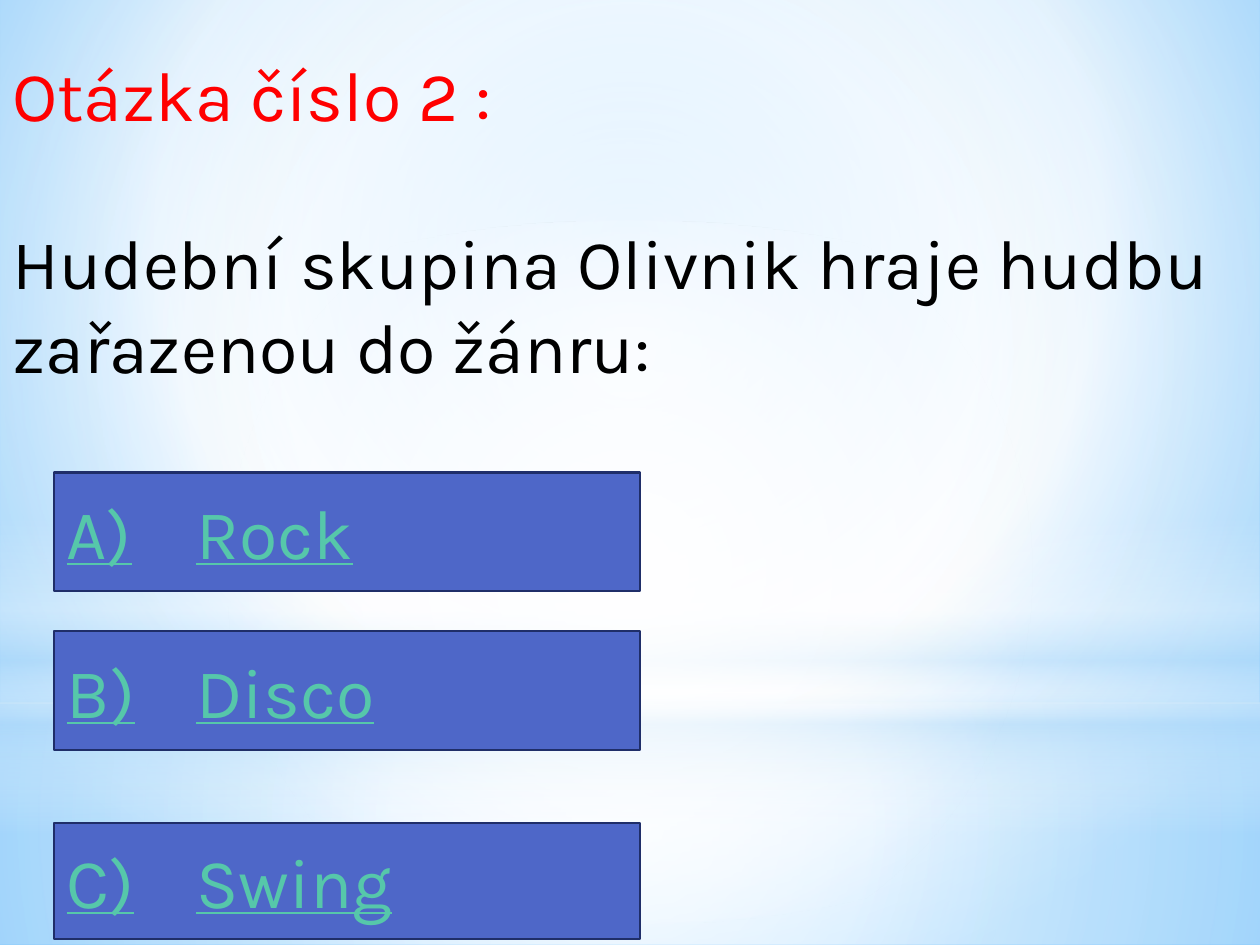
from pptx import Presentation
from pptx.dml.color import RGBColor
from pptx.enum.shapes import MSO_SHAPE
from pptx.enum.text import MSO_ANCHOR, MSO_AUTO_SIZE, PP_ALIGN
from pptx.oxml import parse_xml
from pptx.oxml.ns import nsdecls, qn
from pptx.util import Inches, Pt

FONT = "Karla"
CENTRE = (50, 50, 50, 50)

# Soft light layers: shape, box, gradient stops (position, colour, opacity), focus
LIGHT_LAYERS = [
    (MSO_SHAPE.RECTANGLE, (0, 5.58, 10, 1.92),
     [(0, "FFFFFF", 91), (37, "FFFFFF", 76), (100, "B4DCFA", 79)], CENTRE),
    (MSO_SHAPE.RECTANGLE, (0, 0, 10, 5.58),
     [(0, "FFFFFF", 89), (48, "FFFFFF", 62), (100, "B4DCFA", 79)], CENTRE),
    (MSO_SHAPE.RECTANGLE, (0, 4.12, 10, 2.5),
     [(0, "FFFFFF", 0), (29, "FFFFFF", 30), (45, "B4DCFA", 40),
      (55, "FFFFFF", 26), (65, "B4DCFA", 60), (100, "FFFFFF", 0)], None),
    (MSO_SHAPE.OVAL, (0, 1.75, 10, 5.58),
     [(0, "FFFFFF", 100), (56, "FFFFFF", 0)], CENTRE),
]

# Answers: letter, genre, top, height
ANSWERS = [("A)", "Rock", 3.75, 0.94),
           ("B)", "Disco", 5.01, 0.94),
           ("C)", "Swing", 6.53, 0.92)]


def color(value):
    return RGBColor.from_string(value)


def set_gradient(fill, parent, stops, focus):
    """Fill with a circular gradient, or a vertical one when focus is None."""
    fill.solid()
    stop_xml = "".join(
        f'<a:gs pos="{position * 1000}"><a:srgbClr val="{value}">'
        f'<a:alpha val="{opacity * 1000}"/></a:srgbClr></a:gs>'
        for position, value, opacity in stops)
    if focus is None:
        direction = '<a:lin ang="5400000" scaled="0"/>'
    else:
        edges = " ".join(f'{side}="{percent * 1000}"'
                         for side, percent in zip("ltrb", focus))
        direction = f'<a:path path="circle"><a:fillToRect {edges}/></a:path>'
    gradient = parse_xml(f'<a:gradFill {nsdecls("a")} rotWithShape="1">'
                         f'<a:gsLst>{stop_xml}</a:gsLst>{direction}</a:gradFill>')
    parent.replace(parent.find(qn("a:solidFill")), gradient)


def style_paragraph(paragraph, value):
    paragraph.alignment = PP_ALIGN.LEFT
    paragraph.font.name = FONT
    paragraph.font.size = Pt(40)
    paragraph.font.color.rgb = color(value)


def add_shape(slide, kind, box):
    shape = slide.shapes.add_shape(kind, *(Inches(length) for length in box))
    shape.shadow.inherit = False
    return shape


def add_background(slide):
    fill = slide.background.fill
    fill.solid()
    set_gradient(fill, slide._element.find(".//" + qn("p:bgPr")),
                 [(0, "9ED5FF", 100), (60, "FFFFFF", 100), (100, "5BB9FF", 100)],
                 (20, 10, 20, 60))
    for kind, box, stops, focus in LIGHT_LAYERS:
        shape = add_shape(slide, kind, box)
        shape.line.fill.background()
        set_gradient(shape.fill, shape._element.spPr, stops, focus)


def add_question(slide, heading, question):
    title = slide.shapes.title
    title.left, title.top = Inches(0), Inches(0.36)
    title.width, title.height = Inches(10), Inches(2.79)
    # Bring the title in front of the light layers
    slide.shapes._spTree.append(title._element)
    frame = title.text_frame
    frame.word_wrap = True
    frame.auto_size = MSO_AUTO_SIZE.SHAPE_TO_FIT_TEXT
    frame.vertical_anchor = MSO_ANCHOR.TOP
    frame.text = f"{heading}\n{question}"
    for paragraph, value in zip(frame.paragraphs, ("FF0000", "000000")):
        style_paragraph(paragraph, value)
    frame.paragraphs[0].space_after = Pt(48)


def add_answer(slide, letter, genre, top, height):
    shape = add_shape(slide, MSO_SHAPE.RECTANGLE, (0.43, top, 4.65, height))
    shape.fill.solid()
    shape.fill.fore_color.rgb = color("4E67C8")
    shape.line.color.rgb = color("1F2E69")
    shape.line.width = Pt(1.25)
    frame = shape.text_frame
    frame.word_wrap = True
    frame.vertical_anchor = MSO_ANCHOR.MIDDLE
    paragraph = frame.paragraphs[0]
    paragraph.text = f"{letter}\t{genre}"
    style_paragraph(paragraph, "56C7AA")
    paragraph.font.underline = True
    # Tab stop that lines up the genres
    properties = paragraph._p.get_or_add_pPr()
    properties.insert(0, parse_xml(
        f'<a:tabLst {nsdecls("a")}><a:tab pos="{Inches(1.03)}" algn="l"/></a:tabLst>'))


def main():
    presentation = Presentation()
    presentation.slide_width, presentation.slide_height = Inches(10), Inches(7.5)
    slide = presentation.slides.add_slide(presentation.slide_layouts[5])
    add_background(slide)
    add_question(slide, "Otázka číslo 2 :",
                 "Hudební skupina Olivnik hraje hudbu zařazenou do žánru:")
    for answer in ANSWERS:
        add_answer(slide, *answer)
    presentation.save("out.pptx")


if __name__ == "__main__":
    main()
